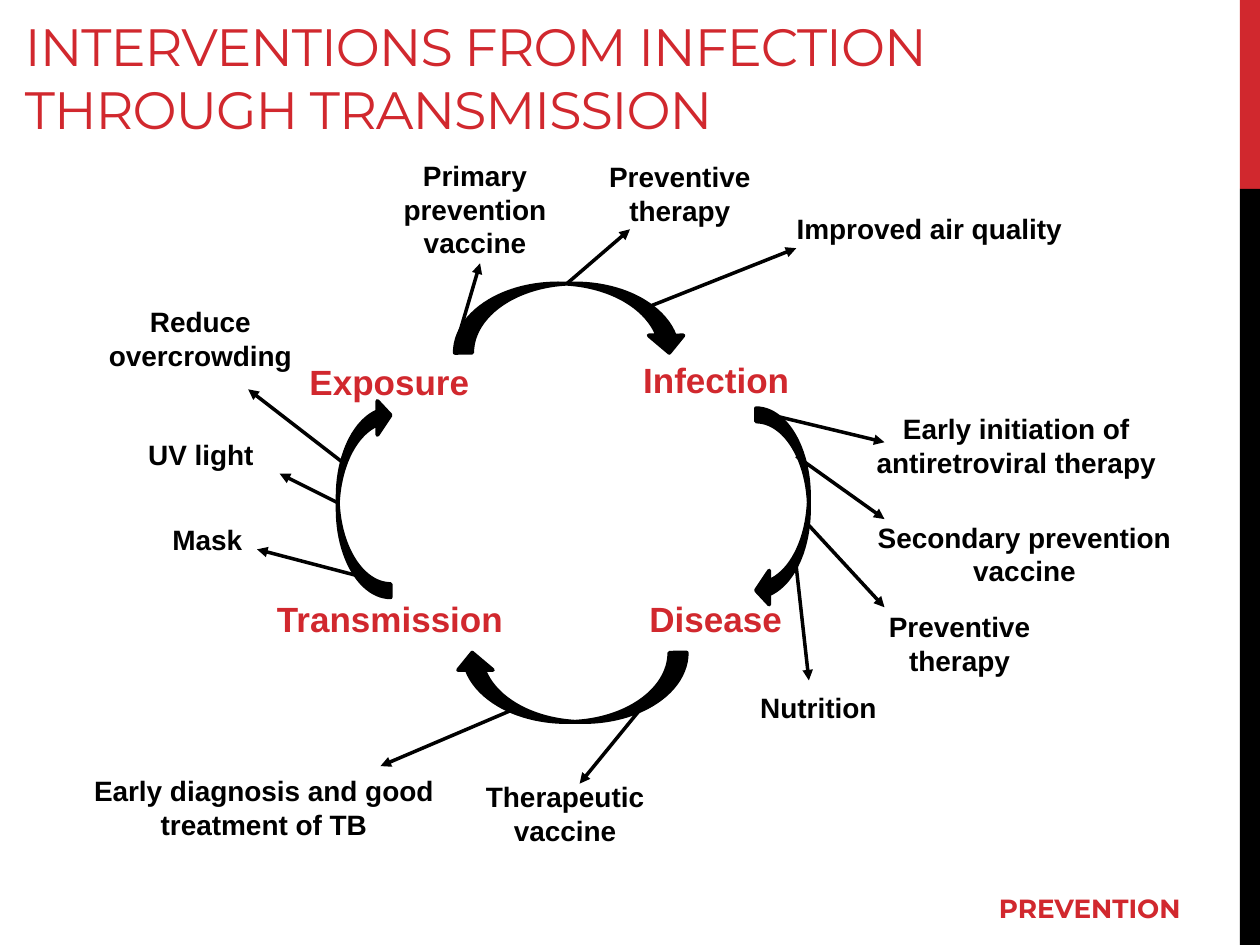
from lxml.etree import SubElement
from pptx import Presentation
from pptx.dml.color import RGBColor
from pptx.enum.shapes import MSO_CONNECTOR, MSO_SHAPE
from pptx.enum.text import MSO_ANCHOR, PP_ALIGN
from pptx.oxml.ns import qn
from pptx.util import Inches, Pt

RED, BLACK = "D1282E", "000000"
TITLE = "INTERVENTIONS FROM INFECTION THROUGH TRANSMISSION"
BARS = [(0, 1.5, RED), (1.5, 6, BLACK)]
STAGES = [
    ("Exposure", 2.35, 2.81, 1.48),
    ("Infection", 5, 2.8, 1.37),
    ("Disease", 5.05, 4.69, 1.26),
    ("Transmission", 2.09, 4.69, 2.01),
]
INTERVENTIONS = [
    ("Primary prevention vaccine", 3.02, 1.21, 1.5, 0.98),
    ("Preventive therapy", 4.52, 1.22, 1.75, 0.94),
    ("Improved air quality", 6, 1.63, 2.75, 0.67),
    ("Early initiation of antiretroviral therapy", 6.69, 3.22, 2.75, 0.94),
    ("Secondary prevention vaccine", 6.67, 4.08, 2.92, 0.94),
    ("Preventive therapy", 6.74, 4.79, 1.75, 0.94),
    ("Nutrition", 5.62, 5.43, 1.75, 0.67),
    ("Therapeutic vaccine", 3.61, 6.14, 1.75, 0.71),
    ("Early diagnosis and good treatment of TB", 0.51, 6.09, 3.17, 0.94),
    ("Mask", 1.02, 4.1, 1.25, 0.94),
    ("UV light", 0.97, 3.42, 1.25, 0.67),
    ("Reduce overcrowding", 0.55, 2.37, 2.08, 0.94),
]
DOWN, LEFT = MSO_SHAPE.CURVED_DOWN_ARROW, MSO_SHAPE.CURVED_LEFT_ARROW
CYCLE = [
    (DOWN, 3.61, 2.25, 1.84, 0.55, 0),
    (LEFT, 6, 3.24, 0.42, 1.58, 0),
    (DOWN, 3.61, 5.18, 1.84, 0.55, 180),
    (LEFT, 2.68, 3.16, 0.42, 1.58, 180),
]
POINTERS = [
    (3.63, 2.7, 3.81, 2.09),
    (4.5, 2.25, 5, 1.82),
    (5.16, 2.43, 6.32, 1.97),
    (6.19, 3.31, 7.02, 3.51),
    (6.32, 3.62, 7.02, 4.12),
    (6.42, 4.17, 7.02, 4.82),
    (6.32, 4.5, 6.42, 5.4),
    (5.09, 5.62, 4.6, 6.22),
    (4.1, 5.62, 3.02, 6.08),
    (2.84, 4.57, 2.04, 4.36),
    (2.68, 3.99, 2.22, 3.76),
    (2.72, 3.67, 1.97, 3.09),
]

prs = Presentation()
prs.slide_width, prs.slide_height = Inches(10), Inches(7.5)
s = prs.slides.add_slide(prs.slide_layouts[6])


def rgb(color):
    return RGBColor.from_string(color)


def add_shape(kind, x, y, w, h, color):
    sp = s.shapes.add_shape(kind, Inches(x), Inches(y), Inches(w), Inches(h))
    sp.shadow.inherit = False
    sp.fill.solid()
    sp.fill.fore_color.rgb = rgb(color)
    sp.line.fill.background()
    return sp


def add_text(text, x, y, w, h, size, color, font="Arial", bold=True,
             align=PP_ALIGN.CENTER, wrap=True):
    sp = s.shapes.add_textbox(Inches(x), Inches(y), Inches(w), Inches(h))
    tf = sp.text_frame
    tf.word_wrap = wrap
    tf.text = text
    p = tf.paragraphs[0]
    p.alignment = align
    r = p.runs[0]
    r.font.name, r.font.size, r.font.bold = font, Pt(size), bold
    r.font.color.rgb = rgb(color)
    return sp


def add_pointer(x1, y1, x2, y2):
    c = s.shapes.add_connector(MSO_CONNECTOR.STRAIGHT, Inches(x1), Inches(y1),
                               Inches(x2), Inches(y2))
    c.line.color.rgb = rgb(BLACK)
    c.line.width = Pt(2)
    SubElement(c.line._get_or_add_ln(), qn("a:tailEnd"), type="triangle")
    SubElement(c._element.spPr, qn("a:effectLst"))


for y, h, color in BARS:
    add_shape(MSO_SHAPE.RECTANGLE, 9.84, y, 0.16, h, color)

title = add_text(TITLE, 0.1, -0.84, 9.17, 2, 30, RED, "Montserrat", False, PP_ALIGN.LEFT)
title.text_frame.vertical_anchor = MSO_ANCHOR.BOTTOM
title.text_frame.paragraphs[0].runs[0].font._element.set("spc", "-60")

for text, x, y, w, h in INTERVENTIONS:
    add_text(text, x, y, w, h, 16, BLACK)
for text, x, y, w in STAGES:
    add_text(text, x, y, w, 0.44, 20, RED, wrap=False)
add_text("PREVENTION", 7.83, 7.03, 1.9, 0.35, 15, RED, "Montserrat", align=PP_ALIGN.LEFT)

for kind, x, y, w, h, rotation in CYCLE:
    sp = add_shape(kind, x, y, w, h, BLACK)
    sp.rotation = rotation
    sp.line.color.rgb = rgb(BLACK)
    sp.line.width = Pt(2.25)
    if kind == LEFT:
        sp.adjustments[1] = 0.64

for pointer in POINTERS:
    add_pointer(*pointer)

prs.save("out.pptx")
